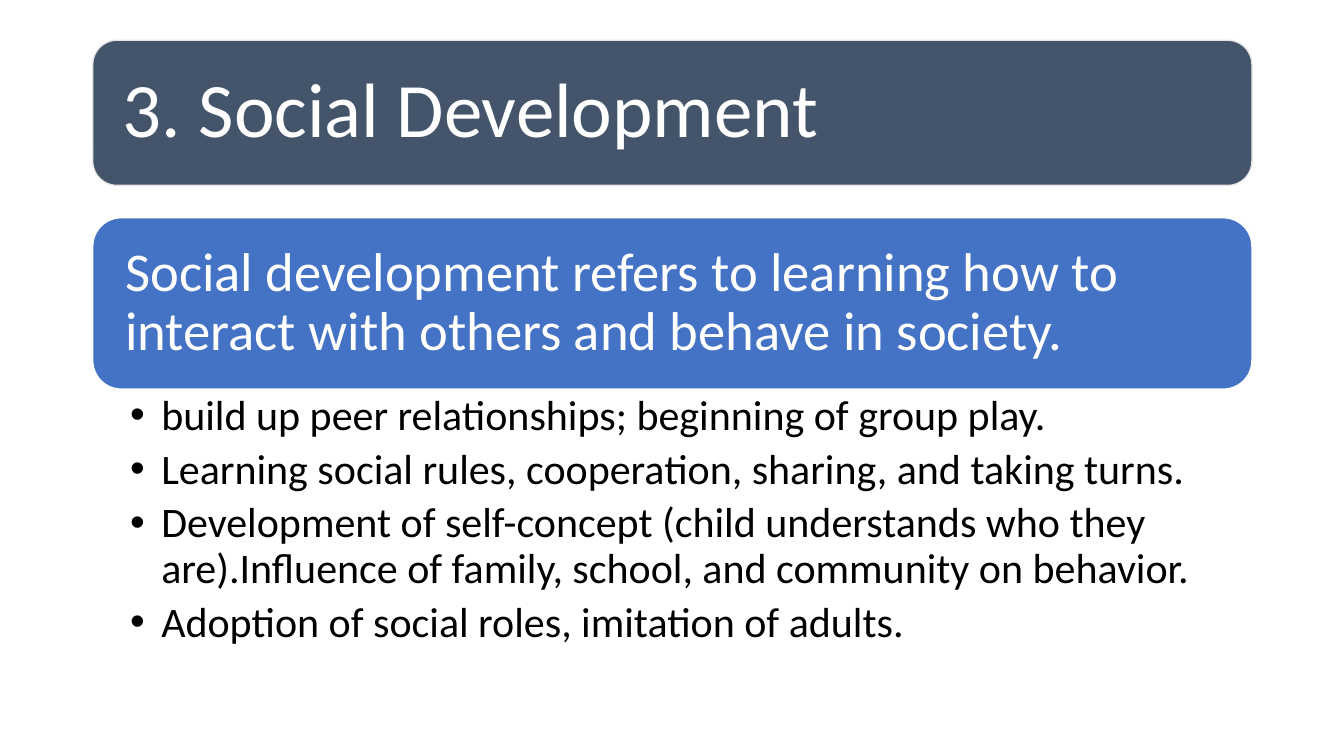
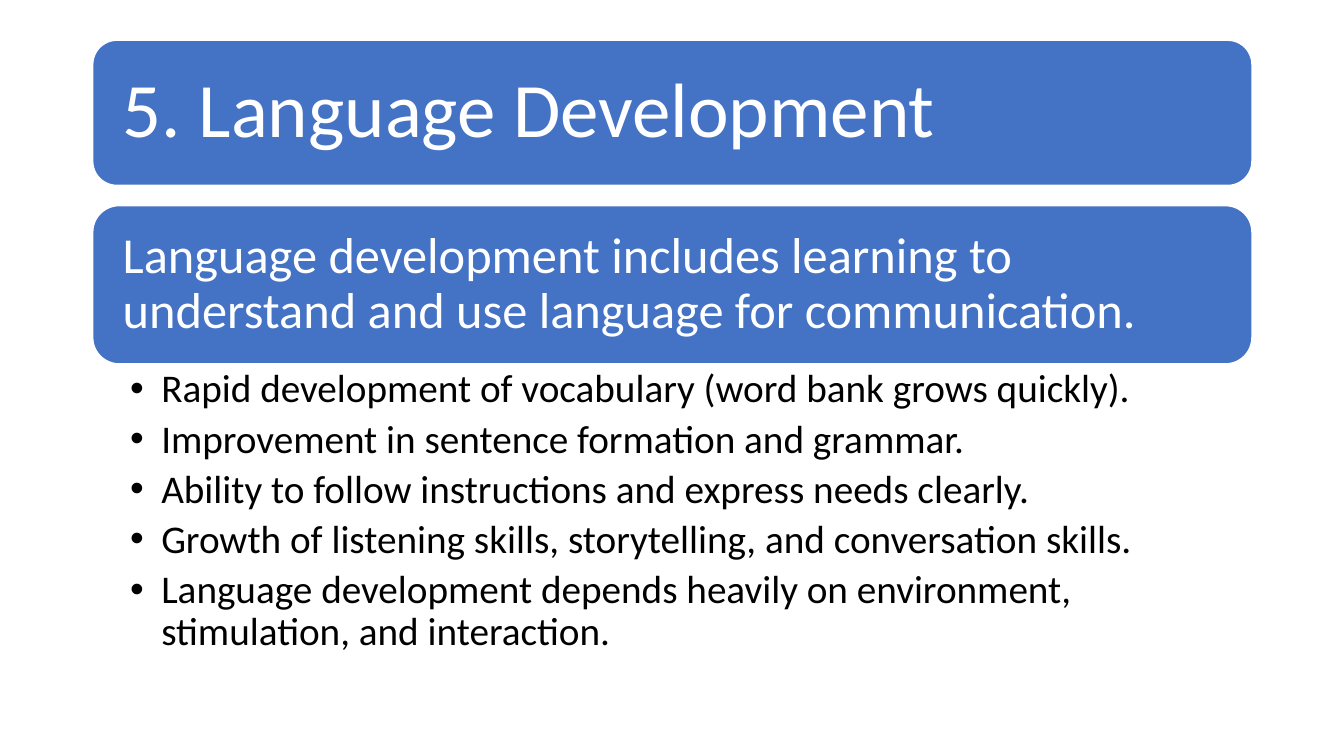
from pptx import Presentation
from pptx.dml.color import RGBColor
from pptx.enum import shapes, text
from pptx.util import Inches, Pt

SLIDE_WIDTH = Inches(13.33)
SLIDE_HEIGHT = Inches(7.5)
LEFT, WIDTH = 6.9, 86.25
TITLE_TOP, TITLE_HEIGHT = 5.33, 19.2

SLATE = RGBColor(0x44, 0x54, 0x6A)
BLUE = RGBColor(0x44, 0x72, 0xC4)
PALE_GREY = RGBColor(0xE7, 0xE6, 0xE6)
WHITE = RGBColor(0xFF, 0xFF, 0xFF)
BLACK = RGBColor(0, 0, 0)

FONT = "Calibri"
TITLE_SIZE = 55
BULLET_INDENT = Inches(0.31)

LESSONS = [
    {
        "title": "3. Social Development",
        "band": (SLATE, PALE_GREY),
        "statement": "Social development refers to learning how to interact with others "
                     "and behave in society.",
        "statement_rows": (28.8, 22.67),
        "statement_size": 39,
        "points": [
            "build up peer relationships; beginning of group play.",
            "Learning social rules, cooperation, sharing, and taking turns.",
            "Development of self-concept (child understands who they are)."
            "Influence of family, school, and community on behavior.",
            "Adoption of social roles, imitation of adults.",
        ],
        "points_height": 36.53,
        "points_size": 30,
    },
    {
        "title": "5. Language Development",
        "band": (BLUE, WHITE),
        "statement": "Language development includes learning to understand and use "
                     "language for communication.",
        "statement_rows": (27.2, 20.93),
        "statement_size": 36,
        "points": [
            "Rapid development of vocabulary (word bank grows quickly).",
            "Improvement in sentence formation and grammar.",
            "Ability to follow instructions and express needs clearly.",
            "Growth of listening skills, storytelling, and conversation skills.",
            "Language development depends heavily on environment, stimulation, "
            "and interaction.",
        ],
        "points_height": 41.33,
        "points_size": 28,
    },
]


def set_all(target, values):
    for name, value in values.items():
        setattr(target, name, value)


def full_width_box(top, height):
    return {
        "left": int(SLIDE_WIDTH * LEFT / 100),
        "top": int(SLIDE_HEIGHT * top / 100),
        "width": int(SLIDE_WIDTH * WIDTH / 100),
        "height": int(SLIDE_HEIGHT * height / 100),
    }


def write(shape, lines, size, color, anchor, insets):
    frame = shape.text_frame
    left, top, right, bottom = (Inches(inset) for inset in insets)
    set_all(frame, {
        "text": "\n".join(lines),
        "word_wrap": True,
        "auto_size": text.MSO_AUTO_SIZE.NONE,
        "vertical_anchor": anchor,
        "margin_left": left,
        "margin_top": top,
        "margin_right": right,
        "margin_bottom": bottom,
    })
    for paragraph in frame.paragraphs:
        set_all(paragraph, {
            "alignment": text.PP_ALIGN.LEFT,
            "line_spacing": 0.9,
            "space_before": Pt(0),
            "space_after": Pt(size * 0.2),
        })
        set_all(paragraph.font, {"name": FONT, "size": Pt(size)})
        paragraph.font.color.rgb = color


def add_band(slide, top, height, fill, line):
    box = full_width_box(top, height)
    band = slide.shapes.add_shape(shapes.MSO_SHAPE.ROUNDED_RECTANGLE, **box)
    band.shadow.inherit = False
    band.fill.solid()
    band.fill.fore_color.rgb = fill
    band.line.color.rgb = line
    band.line.width = Pt(1)
    return band


def add_title(slide, words, fill, line):
    title = slide.shapes.title
    band = add_band(slide, TITLE_TOP, TITLE_HEIGHT, fill, line)
    title.element.addprevious(band.element)
    set_all(title, full_width_box(TITLE_TOP, TITLE_HEIGHT))
    write(title, [words], TITLE_SIZE, WHITE, text.MSO_ANCHOR.MIDDLE, [0.3] * 4)


def add_statement(slide, words, size, top, height):
    band = add_band(slide, top, height, BLUE, WHITE)
    inset = 0.24 if size > 36 else 0.22
    write(band, [words], size, WHITE, text.MSO_ANCHOR.MIDDLE, [inset] * 4)


def add_points(slide, points, size, top, height):
    body = slide.placeholders[1]
    set_all(body, full_width_box(top, height))
    write(body, points, size, BLACK, text.MSO_ANCHOR.TOP, [0.37, 0.05, 0.3, 0.05])
    for paragraph in body.text_frame.paragraphs:
        properties = paragraph._p.get_or_add_pPr()
        properties.set("marL", str(BULLET_INDENT))
        properties.set("indent", str(-BULLET_INDENT))


def add_lesson(presentation, lesson):
    slide = presentation.slides.add_slide(presentation.slide_layouts[1])
    top, height = lesson["statement_rows"]
    add_title(slide, lesson["title"], *lesson["band"])
    add_statement(slide, lesson["statement"], lesson["statement_size"], top, height)
    add_points(slide, lesson["points"], lesson["points_size"],
               top + height, lesson["points_height"])


def main():
    presentation = Presentation()
    set_all(presentation, {"slide_width": SLIDE_WIDTH, "slide_height": SLIDE_HEIGHT})
    for lesson in LESSONS:
        add_lesson(presentation, lesson)
    presentation.save("out.pptx")


if __name__ == "__main__":
    main()
